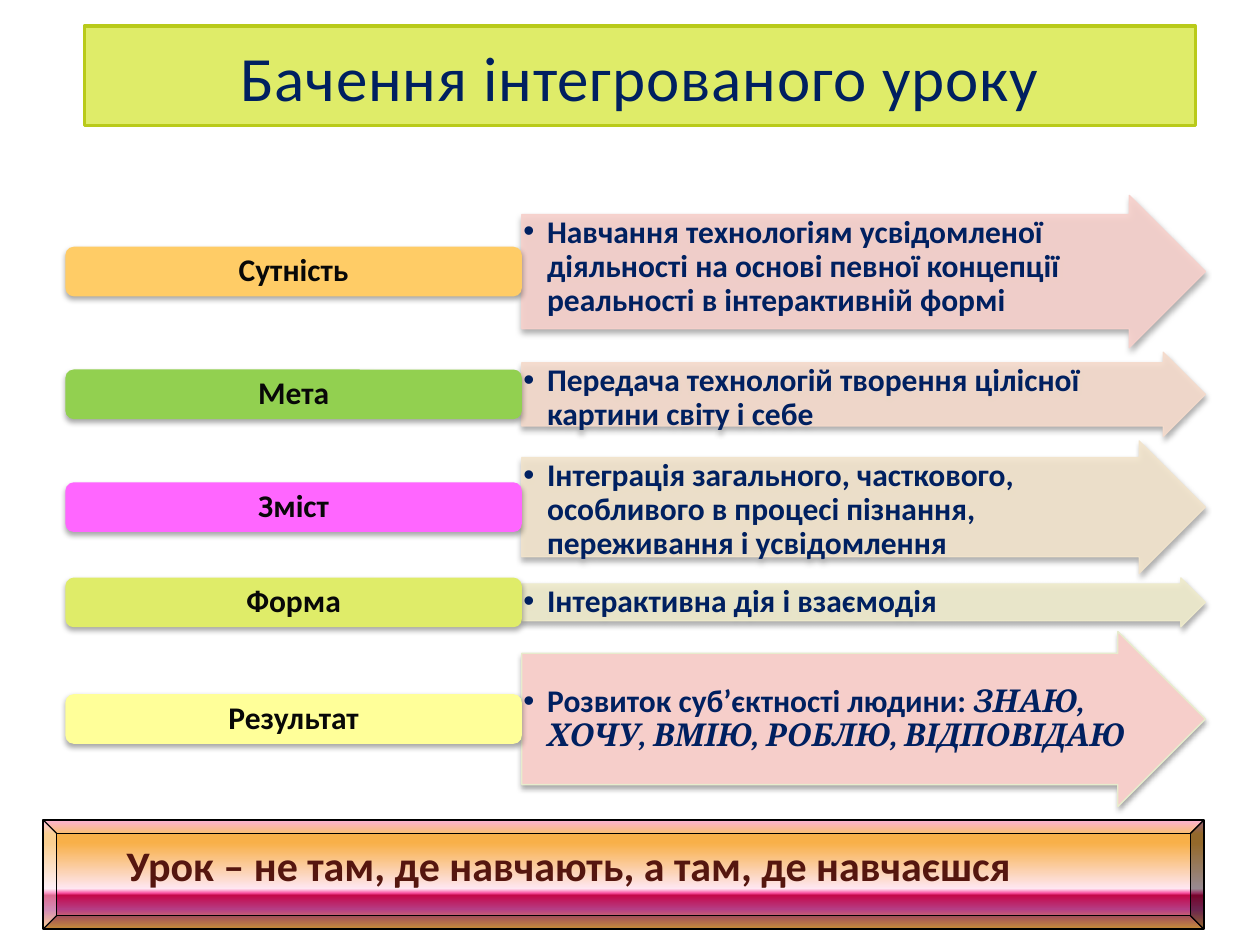
from lxml import etree
from pptx import Presentation
from pptx import util as u
from pptx.dml.color import RGBColor
from pptx.enum import shapes, text
from pptx.oxml import ns

Cm, Pt = u.Cm, u.Pt

COLOURS = {
    "navy": "002060", "black": "000000", "label": "080808", "maroon": "55160F",
    "lime": "DFEC69", "lime_edge": "B9CA1A", "orange": "FFCC66",
    "green": "92D050", "magenta": "FF66FF", "yellow": "FFFF99",
    "pink": "F7D1CC", "peach": "F5DBCC", "sand": "F2E4CC", "ivory": "EFEBCC",
    "rose": "F6CECA", "rose_edge": "E7ECCD",
}
BANNER_STOPS = [
    (0, "FC9FCB"), (13, "F8B049"), (21, "F8B049"), (63, "FEE7F2"),
    (67, "F952A0"), (69, "C50849"), (82, "B43E85"), (100, "F8B049"),
]
SHADOW = {"blurRad": Pt(3.1), "dist": Pt(1.8), "dir": 90 * 60000,
          "algn": "ctr", "rotWithShape": 0}

TITLE_FONT = {"name": "Calibri", "size": Pt(36)}
BODY_FONT = {"name": "Calibri", "size": Pt(18), "bold": True}
ACCENT_FONT = {**BODY_FONT, "name": "Cambria", "italic": True}
BANNER_FONT = {**BODY_FONT, "size": Pt(24)}

TOP, MIDDLE = text.MSO_ANCHOR.TOP, text.MSO_ANCHOR.MIDDLE
CENTER, LEFT = text.PP_ALIGN.CENTER, text.PP_ALIGN.LEFT
TITLE_FRAME = {"word_wrap": False, "vertical_anchor": MIDDLE}
LABEL_FRAME = {
    "word_wrap": True, "vertical_anchor": MIDDLE,
    "margin_left": Cm(0.23), "margin_right": Cm(0.23),
    "margin_top": Cm(0.15), "margin_bottom": Cm(0.15),
}
ARROW_FRAME = {
    "word_wrap": True, "margin_left": Cm(0.03), "margin_right": Cm(0.03),
    "margin_top": Cm(0.03), "margin_bottom": Cm(0.03),
}
BANNER_FRAME = {"word_wrap": True, "vertical_anchor": TOP}

ROW_GAP = 0.09
LABEL_WIDTH, LABEL_HEIGHT = 9.2, 1.0
ROWS = [
    ("Сутність", "orange", 3.07, "pink", "pink", 90, TOP,
     [("Навчання технологіям усвідомленої діяльності на основі певної "
       "концепції реальності в інтерактивній формі", BODY_FONT)]),
    ("Мета", "green", 1.7, "peach", "peach", 90, TOP,
     [("Передача технологій творення цілісної картини світу і себе", BODY_FONT)]),
    ("Зміст", "magenta", 2.67, "sand", "sand", 90, TOP,
     [("Інтеграція загального, часткового, особливого в процесі пізнання, "
       "переживання і усвідомлення", BODY_FONT)]),
    ("Форма", "lime", 0.99, "ivory", "ivory", 90, TOP,
     [("Інтерактивна дія і взаємодія", BODY_FONT)]),
    ("Результат", "yellow", 3.53, "rose", "rose_edge", 100, MIDDLE,
     [("Розвиток суб’єктності людини: ", BODY_FONT),
      ("ЗНАЮ, ХОЧУ, ВМІЮ, РОБЛЮ, ВІДПОВІДАЮ", ACCENT_FONT)]),
]


def apply(target, values):
    for name, value in values.items():
        setattr(target, name, value)


def add_element(parent, tag, **attributes):
    values = {name: str(value) for name, value in attributes.items()}
    return etree.SubElement(parent, ns.qn(tag), values)


def set_colour(colour_format, name):
    colour_format.rgb = RGBColor.from_string(COLOURS[name])


def set_alpha(fill_parent, percent):
    for colour in fill_parent.iter(ns.qn("a:srgbClr")):
        add_element(colour, "a:alpha", val=percent * 1000)


def add_box(slide, preset, box, fill, line=None, width=0.75, opacity=100):
    shape = slide.shapes.add_shape(preset, *(Cm(value) for value in box))
    shape.fill.solid()
    set_colour(shape.fill.fore_color, fill)
    if line:
        set_colour(shape.line.color, line)
        shape.line.width = Pt(width)
    else:
        shape.line.fill.background()
    if opacity < 100:
        set_alpha(shape._element.spPr, opacity)
    shape.shadow.inherit = False
    return shape


def add_shadow(shape):
    effects = shape._element.spPr.find(ns.qn("a:effectLst"))
    shadow = add_element(effects, "a:outerShdw", **SHADOW)
    colour = add_element(shadow, "a:srgbClr", val=COLOURS["black"])
    add_element(colour, "a:alpha", val=35000)


def write(shape, runs, colour, frame, alignment, line_spacing=1.0):
    apply(shape.text_frame, frame)
    paragraph = shape.text_frame.paragraphs[0]
    apply(paragraph, {"alignment": alignment, "line_spacing": line_spacing})
    for wording, font in runs:
        run = paragraph.add_run()
        run.text = wording
        apply(run.font, font)
        set_colour(run.font.color, colour)
    return paragraph


def add_bullet(paragraph, indent):
    properties = paragraph._p.get_or_add_pPr()
    properties.set("marL", str(indent))
    properties.set("indent", str(-indent))
    add_element(properties, "a:buFont", typeface="Arial")
    add_element(properties, "a:buChar", char="•")


def add_title(slide, box):
    shape = add_box(slide, shapes.MSO_SHAPE.RECTANGLE, box, "lime", "lime_edge", 2)
    paragraph = write(shape, [("Бачення інтегрованого уроку", TITLE_FONT)],
                      "navy", TITLE_FRAME, CENTER)
    paragraph.runs[0].font._element.set("spc", "50")


def add_row(slide, box, row):
    name, label_fill, height, fill, line, opacity, anchor, runs = row
    left, top, width = box
    arrow_box = (left + LABEL_WIDTH, top, width - LABEL_WIDTH, height)
    arrow = add_box(slide, shapes.MSO_SHAPE.RIGHT_ARROW, arrow_box, fill, line,
                    opacity=opacity)
    arrow.adjustments[0] = 0.75
    add_shadow(arrow)
    frame = {**ARROW_FRAME, "vertical_anchor": anchor}
    add_bullet(write(arrow, runs, "navy", frame, LEFT, 0.9), Cm(0.48))

    label_top = top + (height - LABEL_HEIGHT) / 2
    label = add_box(slide, shapes.MSO_SHAPE.ROUNDED_RECTANGLE,
                    (left, label_top, LABEL_WIDTH, LABEL_HEIGHT), label_fill)
    add_shadow(label)
    write(label, [(name, BODY_FONT)], "label", LABEL_FRAME, CENTER, 0.9)


def add_rows(slide, box):
    left, top, width = box
    for row in ROWS:
        add_row(slide, (left, top, width), row)
        top += row[2] + ROW_GAP


def add_banner(slide, box):
    shape = add_box(slide, shapes.MSO_SHAPE.BEVEL, box, "orange", "black")
    shape.fill.gradient()
    shape.fill.gradient_angle = 270
    stops = next(shape._element.spPr.iter(ns.qn("a:gsLst")))
    for stop in list(stops):
        stops.remove(stop)
    for position, colour in BANNER_STOPS:
        stop = add_element(stops, "a:gs", pos=position * 1000)
        add_element(stop, "a:srgbClr", val=colour)
    wording = "Урок – не там, де навчають, а там, де навчаєшся"
    paragraph = write(shape, [(wording, BANNER_FONT)], "maroon", BANNER_FRAME, LEFT)
    paragraph._p.get_or_add_pPr().set("marL", str(Cm(1.16)))


def main():
    presentation = Presentation()
    apply(presentation, {"slide_width": Cm(25.4), "slide_height": Cm(19.05)})
    slide = presentation.slides.add_slide(presentation.slide_layouts[6])
    add_title(slide, (1.7, 0.53, 22.4, 2.0))
    add_rows(slide, (1.32, 3.94, 22.98))
    add_banner(slide, (0.87, 16.53, 23.4, 2.2))
    presentation.save("out.pptx")


if __name__ == "__main__":
    main()
